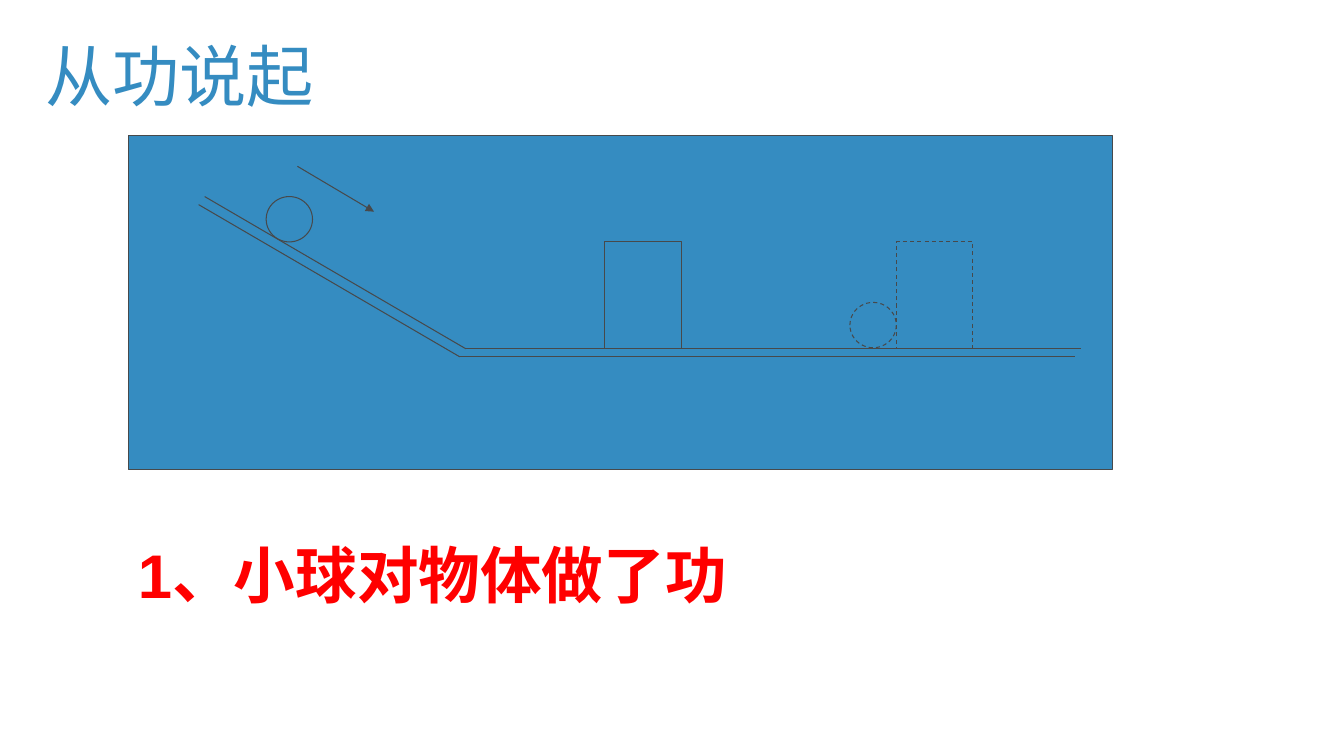
from dataclasses import dataclass

from lxml import etree
from pptx import Presentation
from pptx.dml.color import RGBColor
from pptx.enum.dml import MSO_LINE
from pptx.enum.shapes import MSO_CONNECTOR, MSO_SHAPE
from pptx.enum.text import MSO_ANCHOR, PP_ALIGN
from pptx.oxml.ns import qn
from pptx.util import Inches, Pt

RECT = MSO_SHAPE.RECTANGLE
OVAL = MSO_SHAPE.OVAL
STRAIGHT = MSO_CONNECTOR.STRAIGHT
DASH = MSO_LINE.DASH
TOP = MSO_ANCHOR.TOP
LEFT = PP_ALIGN.LEFT


@dataclass(frozen=True)
class Theme:
    font: str = "Arial"
    blue: RGBColor = RGBColor(0x35, 0x8C, 0xC1)
    outline: RGBColor = RGBColor(0x47, 0x49, 0x4B)
    red: RGBColor = RGBColor(0xFF, 0x00, 0x00)
    title_size: Pt = Pt(48)
    statement_size: Pt = Pt(44)
    line_width: Pt = Pt(0.75)


class SlideBuilder:
    def __init__(self, slide, theme):
        self.s = slide
        self.theme = theme

    def set_text(self, sp, text, size, color, bold=False):
        tf = sp.text_frame
        tf.word_wrap = True
        tf.vertical_anchor = TOP
        tf.text = text
        p = tf.paragraphs[0]
        p.alignment = LEFT
        p.font.name = self.theme.font
        p.font.size = size
        p.font.bold = bold
        p.font.color.rgb = color

    def title(self, text, x, y, w, h):
        sp = self.s.shapes.title
        sp.left, sp.top, sp.width, sp.height = map(Inches, (x, y, w, h))
        self.set_text(sp, text, self.theme.title_size, self.theme.blue)

    def statement(self, text, x, y, w, h):
        sp = self.s.shapes.add_textbox(*map(Inches, (x, y, w, h)))
        self.set_text(sp, text, self.theme.statement_size, self.theme.red, True)

    def stroke(self, line):
        line.color.rgb = self.theme.outline
        line.width = self.theme.line_width

    def shape(self, kind, x, y, w, h, dashed=False):
        sp = self.s.shapes.add_shape(kind, *map(Inches, (x, y, w, h)))
        sp.shadow.inherit = False
        sp.fill.solid()
        sp.fill.fore_color.rgb = self.theme.blue
        self.stroke(sp.line)
        if dashed:
            sp.line.dash_style = DASH

    def line(self, start, end, arrow=False):
        cxn = self.s.shapes.add_connector(STRAIGHT, *map(Inches, (*start, *end)))
        self.stroke(cxn.line)
        sp_pr = cxn._element.spPr
        if arrow:
            etree.SubElement(sp_pr.find(qn("a:ln")), qn("a:tailEnd"), type="triangle")
        etree.SubElement(sp_pr, qn("a:effectLst"))


def main():
    prs = Presentation()
    prs.slide_width, prs.slide_height = Inches(13.33), Inches(7.5)
    s = prs.slides.add_slide(prs.slide_layouts[5])
    builder = SlideBuilder(s, Theme())

    builder.title("从功说起", 0.35, 0.29, 4.04, 0.91)
    builder.shape(RECT, 1.27, 1.34, 9.76, 3.32)

    for ball_x, ball_y, block_x, dashed in (
        (2.64, 1.95, 6, False),
        (8.43, 3, 8.89, True),
    ):
        builder.shape(OVAL, ball_x, ball_y, 0.46, 0.45, dashed)
        builder.shape(RECT, block_x, 2.4, 0.76, 1.06, dashed)

    for dx, dy in ((0, 0), (-0.06, 0.08)):
        top, bend, end = (
            (x + dx, y + dy) for x, y in ((2.03, 1.95), (4.62, 3.46), (10.72, 3.46))
        )
        builder.line(top, bend)
        builder.line(bend, end)
    builder.line((2.95, 1.65), (3.71, 2.1), arrow=True)

    builder.statement("1、小球对物体做了功", 1.27, 5.28, 6.12, 0.84)
    prs.save("out.pptx")


if __name__ == "__main__":
    main()
